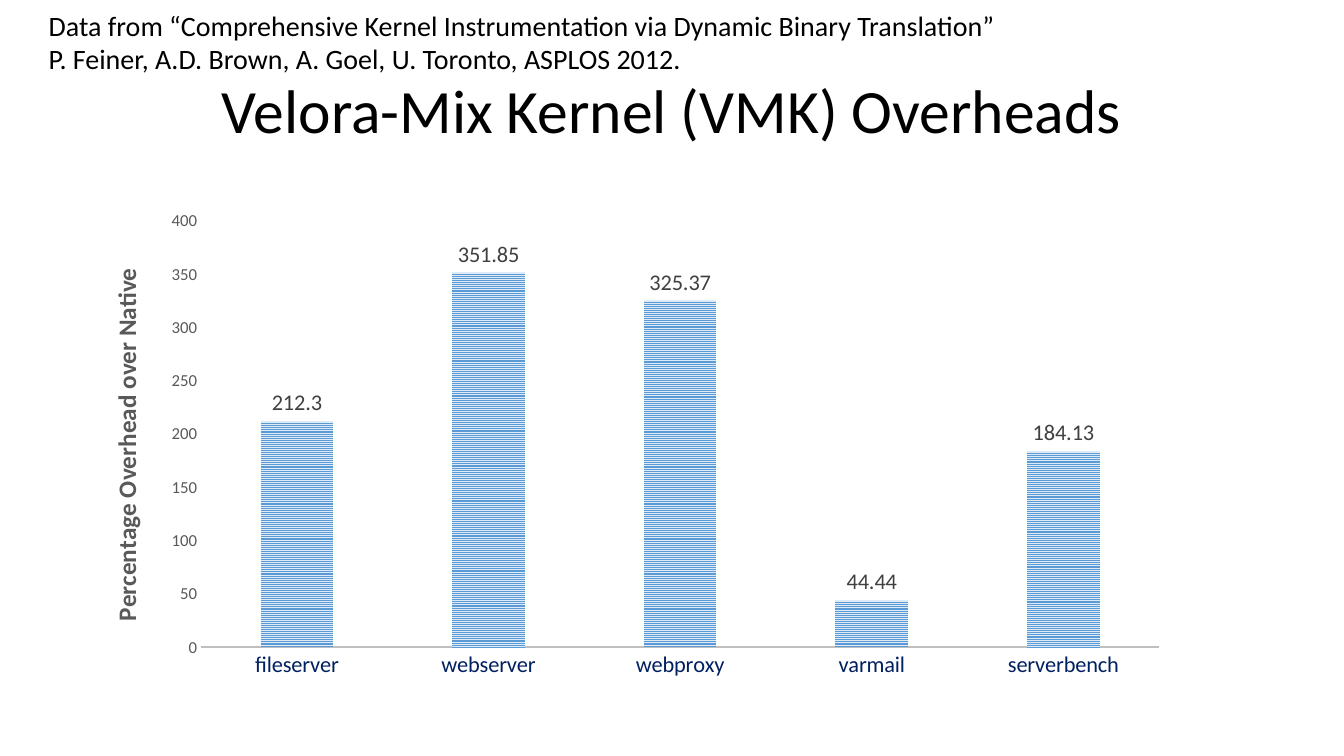
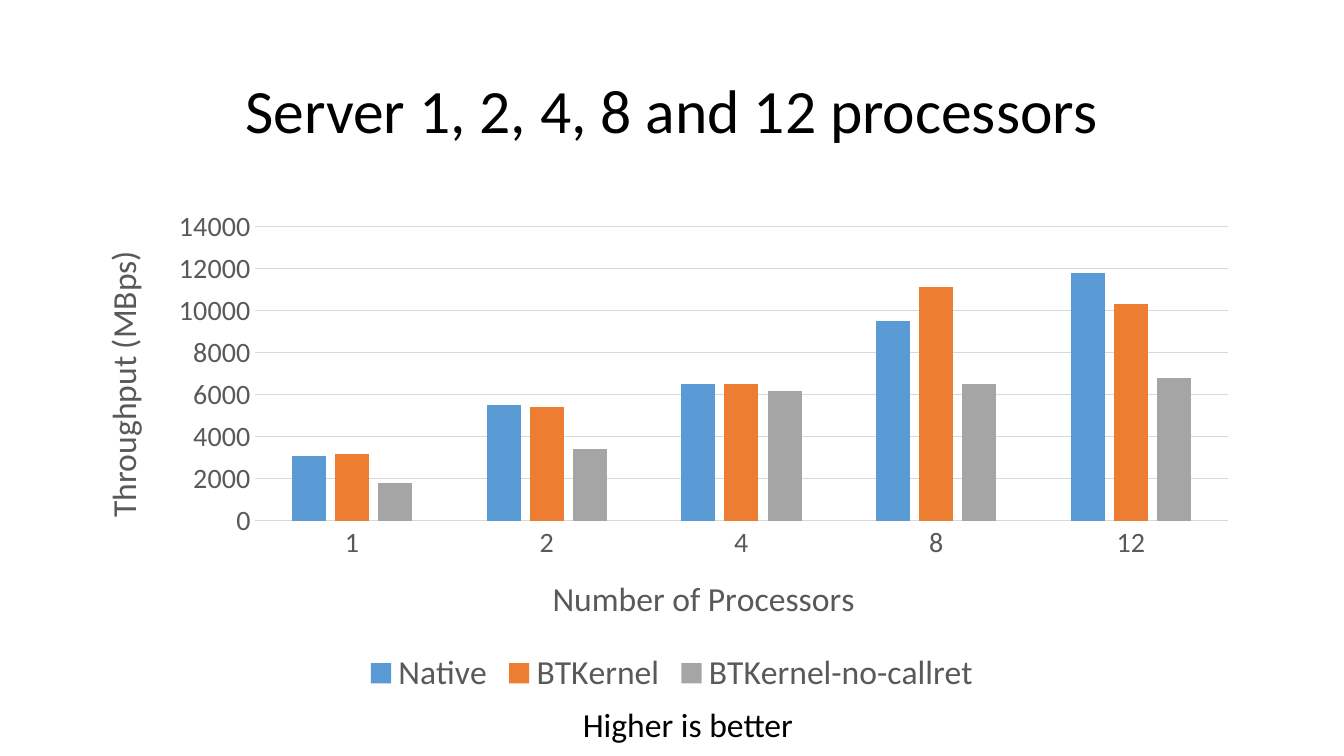
from lxml import etree
from pptx import Presentation
from pptx.chart.data import CategoryChartData
from pptx.dml.color import RGBColor
from pptx.enum.chart import (XL_CHART_TYPE, XL_LABEL_POSITION,
                             XL_LEGEND_POSITION, XL_TICK_MARK)
from pptx.enum.dml import MSO_PATTERN
from pptx.enum.text import MSO_ANCHOR, MSO_AUTO_SIZE, PP_ALIGN
from pptx.oxml.ns import qn
from pptx.util import Emu, Pt

COLS, ROWS = 160, 90
CELL = Emu(76200)
TITLE_ONLY = 5
FONT = "Calibri"

BLACK = RGBColor(0x00, 0x00, 0x00)
NAVY = RGBColor(0x00, 0x20, 0x60)
DARK_GRAY = RGBColor(0x40, 0x40, 0x40)
GRAY = RGBColor(0x59, 0x59, 0x59)
AXIS_GRAY = RGBColor(0xBF, 0xBF, 0xBF)
GRID_GRAY = RGBColor(0xD9, 0xD9, 0xD9)
BLUE = RGBColor(0x5B, 0x9B, 0xD5)
PALE_BLUE = RGBColor(0xDE, 0xEB, 0xF7)
ORANGE = RGBColor(0xED, 0x7D, 0x31)
SILVER = RGBColor(0xA5, 0xA5, 0xA5)


def box(col, row, cols, rows):
    """Turn grid columns and rows into left, top, width and height."""
    return [Emu(round(n * CELL)) for n in (col, row, cols, rows)]


def set_attrs(obj, values):
    for name, value in values.items():
        setattr(obj, name, value)


def set_font(font, size, color=BLACK, bold=False):
    set_attrs(font, {"name": FONT, "size": Pt(size), "bold": bold})
    font.color.rgb = color


def set_line(line, color, width):
    line.color.rgb = color
    line.width = Pt(width)


def add_title_slide(prs, text):
    s = prs.slides.add_slide(prs.slide_layouts[TITLE_ONLY])
    sp = s.shapes.title
    left, top, width, height = box(11, 4.8, 138, 17.4)
    set_attrs(sp, {"left": left, "top": top, "width": width, "height": height})
    tf = sp.text_frame
    tf.vertical_anchor = MSO_ANCHOR.MIDDLE
    p = tf.paragraphs[0]
    set_attrs(p, {"text": text, "alignment": PP_ALIGN.CENTER, "line_spacing": 0.9})
    set_font(p.runs[0].font, 44)
    return s


def add_text(s, place, lines, size, wrap=True):
    tf = s.shapes.add_textbox(*box(*place)).text_frame
    set_attrs(tf, {"text": "\n".join(lines), "word_wrap": wrap,
                   "auto_size": MSO_AUTO_SIZE.SHAPE_TO_FIT_TEXT})
    for p in tf.paragraphs:
        set_font(p.runs[0].font, size)


def add_column_chart(s, place, categories, series, gap, overlap):
    data = CategoryChartData()
    data.categories = categories
    for name, values in series:
        data.add_series(name, values)
    chart = s.shapes.add_chart(
        XL_CHART_TYPE.COLUMN_CLUSTERED, *box(*place), data).chart
    set_attrs(chart, {"has_title": False, "has_legend": False})
    set_font(chart.font, 10)
    set_attrs(chart.plots[0], {"gap_width": gap, "overlap": overlap,
                               "vary_by_categories": False})
    return chart


def place_plot(chart, **shares):
    """Fix the inner plot area by shares (x, y, w, h) of the chart."""
    area = chart.plots[0]._element.getparent()
    for old in area.findall(qn("c:layout")):
        area.remove(old)
    layout = etree.Element(qn("c:layout"))
    manual = etree.SubElement(layout, qn("c:manualLayout"))
    settings = {"layoutTarget": "inner", "xMode": "edge", "yMode": "edge", **shares}
    for tag, value in settings.items():
        etree.SubElement(manual, qn(f"c:{tag}")).set("val", str(value))
    area.insert(0, layout)


def format_axis(axis, size, color=GRAY, line=None, grid=None):
    set_attrs(axis, {"major_tick_mark": XL_TICK_MARK.NONE,
                     "minor_tick_mark": XL_TICK_MARK.NONE,
                     "has_major_gridlines": grid is not None})
    set_font(axis.tick_labels.font, size, color)
    if line:
        set_line(axis.format.line, *line)
    else:
        axis.format.line.fill.background()
    if grid:
        set_line(axis.major_gridlines.format.line, *grid)


def set_scale(axis, maximum, unit):
    set_attrs(axis, {"minimum_scale": 0, "maximum_scale": maximum,
                     "major_unit": unit})


def add_axis_title(axis, text, size, bold=False):
    p = axis.axis_title.text_frame.paragraphs[0]
    r = p.add_run()
    r.text = text
    set_font(r.font, size, GRAY, bold)


def add_value_labels(plot, size):
    plot.has_data_labels = True
    labels = plot.data_labels
    set_attrs(labels, {"show_value": True,
                       "position": XL_LABEL_POSITION.OUTSIDE_END})
    set_font(labels.font, size, DARK_GRAY)


def add_legend(chart, size):
    chart.has_legend = True
    set_attrs(chart.legend, {"position": XL_LEGEND_POSITION.BOTTOM,
                             "include_in_layout": False})
    set_font(chart.legend.font, size, GRAY)


def build_overheads(prs):
    s = add_title_slide(prs, "Velora-Mix Kernel (VMK) Overheads")
    add_text(s, (4.6, 0.4, 149.6, 13), [
        "Data from “Comprehensive Kernel Instrumentation via Dynamic Binary Translation”",
        "P. Feiner, A.D. Brown, A. Goel, U. Toronto, ASPLOS 2012."], 20)
    chart = add_column_chart(
        s, (11, 24, 129.6, 57.7),
        ["fileserver", "webserver", "webproxy", "varmail", "serverbench"],
        [("Series 1", (212.3, 351.85, 325.37, 44.44, 184.13))], 164, -22)
    place_plot(chart, x=0.1, y=0.04, w=0.88, h=0.88)
    format_axis(chart.category_axis, 16, NAVY, (AXIS_GRAY, 1.5))
    format_axis(chart.value_axis, 12)
    set_scale(chart.value_axis, 400, 50)
    add_axis_title(chart.value_axis, "Percentage Overhead over Native", 18, True)
    plot = chart.plots[0]
    add_value_labels(plot, 16)
    fill = plot.series[0].format.fill
    fill.patterned()
    fill.pattern = MSO_PATTERN.NARROW_HORIZONTAL
    fill.fore_color.rgb = BLUE
    fill.back_color.rgb = PALE_BLUE


def build_throughput(prs):
    s = add_title_slide(prs, "Server 1, 2, 4, 8 and 12 processors")
    chart = add_column_chart(
        s, (11, 24, 138, 59.4), ["1", "2", "4", "8", "12"],
        [("Native", (3100, 5500, 6500, 9500, 11800)),
         ("BTKernel", (3200, 5400, 6500, 11100, 10300)),
         ("BTKernel-no-callret", (1800, 3400, 6200, 6500, 6800))], 219, -27)
    place_plot(chart, x=0.14, y=0.05, w=0.84, h=0.59)
    thin = (GRID_GRAY, 0.75)
    format_axis(chart.category_axis, 20, line=thin)
    format_axis(chart.value_axis, 20, grid=thin)
    set_scale(chart.value_axis, 14000, 2000)
    add_axis_title(chart.category_axis, "Number of Processors", 24)
    add_axis_title(chart.value_axis, "Throughput (MBps)", 24)
    add_legend(chart, 24)
    for series, color in zip(chart.plots[0].series, (BLUE, ORANGE, SILVER)):
        series.format.fill.solid()
        series.format.fill.fore_color.rgb = color
    add_text(s, (68.2, 83.2, 27.7, 6), ["Higher is better"], 24, wrap=False)


def main():
    prs = Presentation()
    set_attrs(prs, {"slide_width": COLS * CELL, "slide_height": ROWS * CELL})
    build_overheads(prs)
    build_throughput(prs)
    prs.save("out.pptx")


if __name__ == "__main__":
    main()
